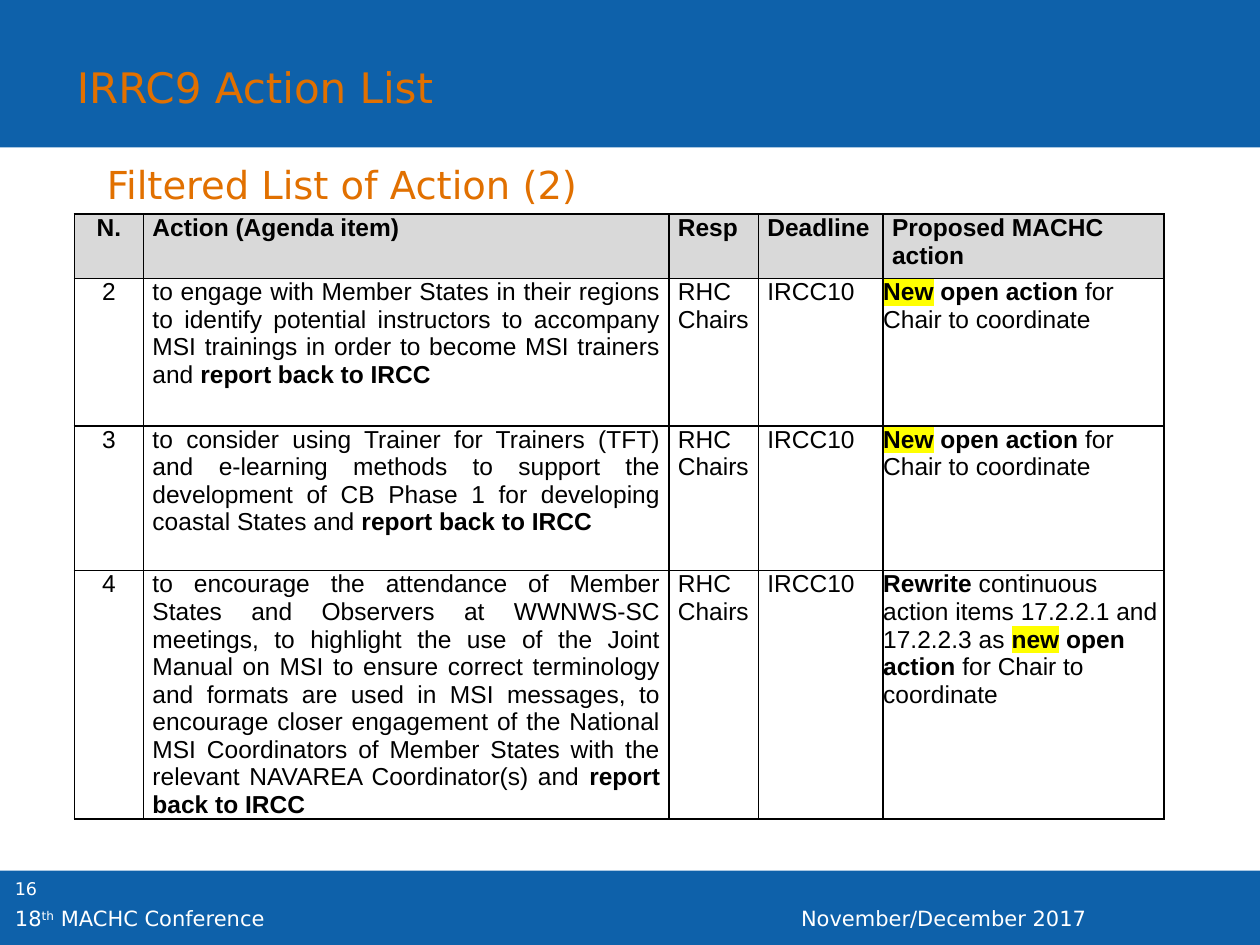
from lxml import etree
from pptx import Presentation
from pptx.dml.color import RGBColor
from pptx.enum import shapes, text
from pptx.oxml.ns import qn
from pptx.util import Inches, Pt

COLORS = {"blue": "0E61AA", "orange": "E17000", "white": "FFFFFF",
          "black": "000000", "grey": "D9D9D9", "yellow": "FFFF00"}
HEADING_FONT, TABLE_FONT = "DejaVu Sans", "Arial"
LEFT, CENTER, JUSTIFY = (text.PP_ALIGN.LEFT, text.PP_ALIGN.CENTER,
                         text.PP_ALIGN.JUSTIFY)

# A run is a string, or a (string, style) pair.
TITLE = "IRRC9 Action List"
SUBTITLE = "Filtered List of Action (2)"
FOOTERS = [
    (["16"], 10, (0.02, 6.92, 0.78, 0.4)),
    (["November/December 2017"], 12, (6.26, 7.14, 3.74, 0.24)),
    (["18", ("th", "superscript"), " MACHC Conference"], 12,
     (0.02, 7.14, 4.38, 0.24)),
]
HEADERS = ["N.", "Action (Agenda item)", "Resp", "Deadline",
           "Proposed MACHC action"]
REPORT = ("report back to IRCC", "bold")
OPEN_ACTION = [(" open action", "bold"), " for Chair to coordinate"]
NEW_ACTION = [("New", "highlight"), *OPEN_ACTION]
ACTIONS = [
    ("2", "to engage with Member States in their regions to identify potential "
          "instructors to accompany MSI trainings in order to become MSI "
          "trainers and ", NEW_ACTION),
    ("3", "to consider using Trainer for Trainers (TFT) and e-learning methods "
          "to support the development of CB Phase 1 for developing coastal "
          "States and ", NEW_ACTION),
    ("4", "to encourage the attendance of Member States and Observers at "
          "WWNWS-SC meetings, to highlight the use of the Joint Manual on MSI "
          "to ensure correct terminology and formats are used in MSI messages, "
          "to encourage closer engagement of the National MSI Coordinators of "
          "Member States with the relevant NAVAREA Coordinator(s) and ",
     [("Rewrite", "bold"),
      " continuous action items 17.2.2.1 and 17.2.2.3 as ",
      ("new", "highlight"), *OPEN_ACTION]),
]
COLUMN_WIDTHS = [0.55, 4.17, 0.71, 0.99, 2.23]
ROW_HEIGHTS = [0.51, 1.17, 1.15, 1.97]
INDENTS = [0.1, 0.07, 0.07, 0.07, 0.07]


def rgb(name):
    return RGBColor.from_string(COLORS[name])


def add_color(parent, tag, name):
    element = etree.SubElement(parent, qn(tag))
    etree.SubElement(element, qn("a:srgbClr"), val=COLORS[name])


def write(frame, runs, size, color, font=HEADING_FONT, align=LEFT, indent=0,
          bold=False):
    paragraph = frame.paragraphs[0]
    paragraph.alignment = align
    if indent:
        properties = paragraph._p.get_or_add_pPr()
        for side in ("marL", "marR"):
            properties.set(side, str(Inches(indent)))
        properties.set("indent", "0")
    for item in runs:
        content, style = (item, "") if isinstance(item, str) else item
        run = paragraph.add_run()
        run.text = content
        run.font.size = Pt(size)
        run.font.bold = bold or style in ("bold", "highlight")
        run.font.color.rgb = rgb(color)
        properties = run._r.get_or_add_rPr()
        if style == "highlight":
            add_color(properties, "a:highlight", "yellow")
        elif style == "superscript":
            properties.set("baseline", "30000")
        run.font.name = font


def add_band(slide, top, height):
    band = slide.shapes.add_shape(shapes.MSO_SHAPE.RECTANGLE, 0, Inches(top),
                                  Inches(10), Inches(height))
    band.shadow.inherit = False
    band.fill.solid()
    band.fill.fore_color.rgb = rgb("blue")
    band.line.fill.background()


def add_text(slide, runs, size, color, box):
    frame = slide.shapes.add_textbox(*map(Inches, box)).text_frame
    frame.word_wrap = True
    write(frame, runs, size, color)


def add_title(slide):
    title = slide.shapes.title
    title.left, title.top, title.width, title.height = map(
        Inches, (0.51, 0.44, 3.26, 0.5))
    frame = title.text_frame
    frame.auto_size = text.MSO_AUTO_SIZE.NONE
    frame.vertical_anchor = text.MSO_ANCHOR.TOP
    write(frame, [TITLE], 24, "orange")
    slide.shapes._spTree.append(title._element)  # bring in front of the bands


def style_cell(cell, is_header):
    cell.margin_left = cell.margin_right = 0
    cell.margin_top = cell.margin_bottom = 0
    properties = cell._tc.get_or_add_tcPr()
    for side in ("a:lnL", "a:lnR", "a:lnT", "a:lnB"):
        line = etree.SubElement(properties, qn(side), w=str(Pt(1)))
        add_color(line, "a:solidFill", "black")
    if is_header:
        cell.fill.solid()
        cell.fill.fore_color.rgb = rgb("grey")
    else:
        cell.fill.background()


def add_action_table(slide):
    rows = [[[header] for header in HEADERS]]
    rows += [[[number], [action, REPORT], ["RHC Chairs"], ["IRCC10"], proposal]
             for number, action, proposal in ACTIONS]
    table = slide.shapes.add_table(
        len(rows), len(HEADERS), Inches(0.59), Inches(1.7),
        Inches(sum(COLUMN_WIDTHS)), Inches(sum(ROW_HEIGHTS))).table
    table.first_row = table.horz_banding = False
    for column, width in zip(table.columns, COLUMN_WIDTHS):
        column.width = Inches(width)
    for row, height in zip(table.rows, ROW_HEIGHTS):
        row.height = Inches(height)
    for i, row in enumerate(rows):
        is_header = i == 0
        aligns = [CENTER, LEFT if is_header else JUSTIFY, LEFT, LEFT, LEFT]
        indents = INDENTS if is_header else [0, *INDENTS[1:4], 0]
        for j, runs in enumerate(row):
            cell = table.cell(i, j)
            style_cell(cell, is_header)
            write(cell.text_frame, runs, 14, "black", font=TABLE_FONT,
                  align=aligns[j], indent=indents[j], bold=is_header)


def main():
    presentation = Presentation()
    presentation.slide_width, presentation.slide_height = Inches(10), Inches(7.5)
    slide = presentation.slides.add_slide(presentation.slide_layouts[5])
    add_band(slide, 6.91, 0.59)
    add_band(slide, 0, 1.17)
    for runs, size, box in FOOTERS:
        add_text(slide, runs, size, "white", box)
    add_text(slide, [SUBTITLE], 22, "orange", (0.75, 1.23, 4.17, 0.47))
    add_title(slide)
    add_action_table(slide)
    presentation.save("out.pptx")


if __name__ == "__main__":
    main()
